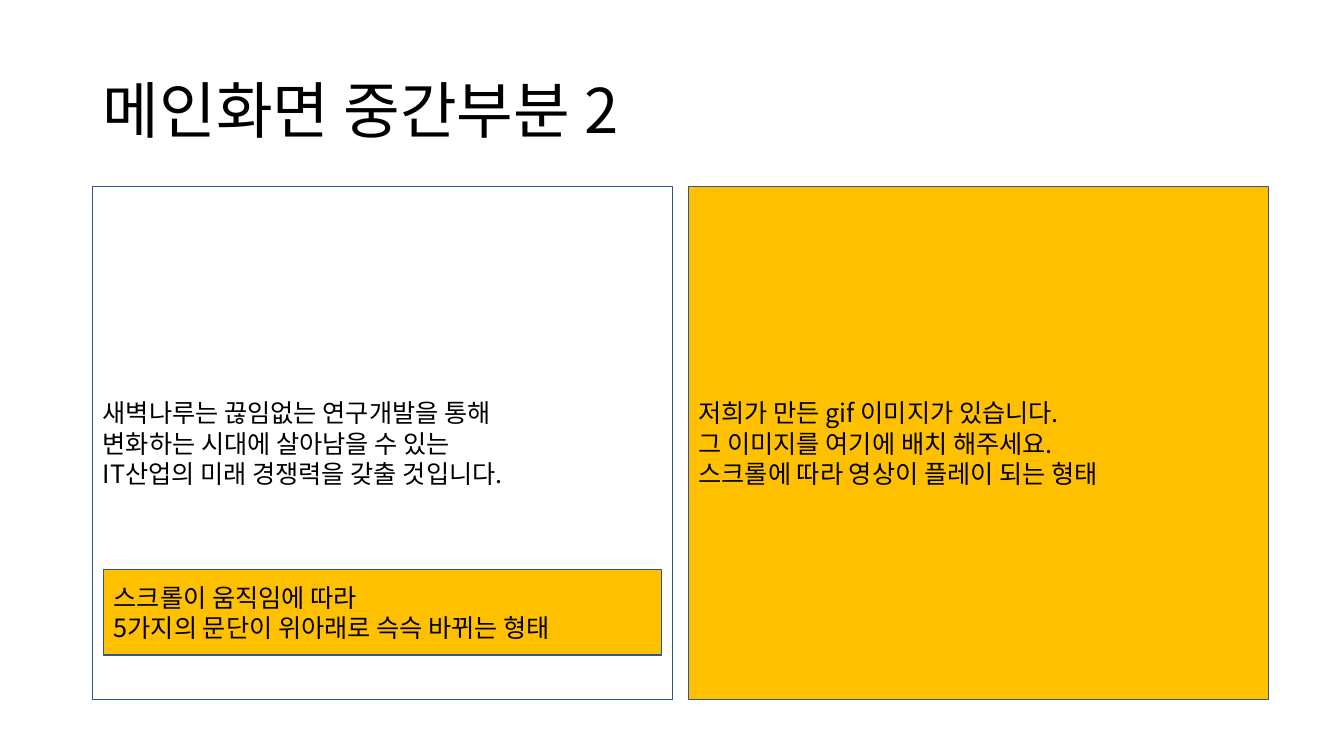
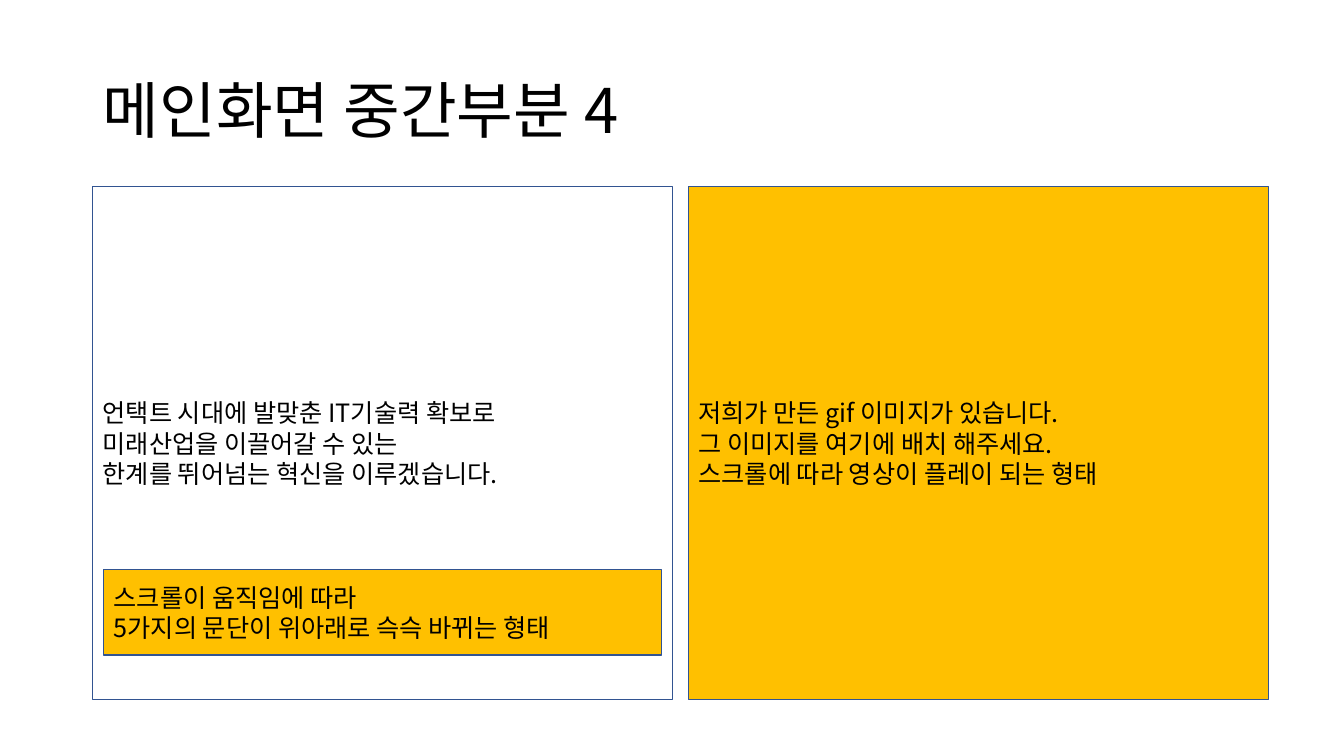
from dataclasses import dataclass

from lxml.etree import SubElement
from pptx import Presentation
from pptx.dml.color import RGBColor
from pptx.enum.shapes import MSO_SHAPE
from pptx.enum.text import MSO_ANCHOR, MSO_AUTO_SIZE, PP_ALIGN
from pptx.oxml.ns import qn
from pptx.util import Inches, Pt

SLIDES = [
    ("메인화면 중간부분 2", [
        "새벽나루는 끊임없는 연구개발을 통해",
        "변화하는 시대에 살아남을 수 있는",
        "IT산업의 미래 경쟁력을 갖출 것입니다.",
    ]),
    ("메인화면 중간부분 4", [
        "언택트 시대에 발맞춘 IT기술력 확보로",
        "미래산업을 이끌어갈 수 있는",
        "한계를 뛰어넘는 혁신을 이루겠습니다.",
    ]),
]
MEDIA = [
    "저희가 만든 gif 이미지가 있습니다.",
    "그 이미지를 여기에 배치 해주세요.",
    "스크롤에 따라 영상이 플레이 되는 형태",
]
SCROLL = [
    "스크롤이 움직임에 따라",
    "5가지의 문단이 위아래로 슥슥 바뀌는 형태",
]


@dataclass(frozen=True)
class Theme:
    font: str = "Noto Sans CJK KR"
    ink: str = "000000"
    edge: str = "325491"
    accent: str = "FFC000"
    title: int = 44
    body: int = 18


THEME = Theme()
WIDTH, HEIGHT = 13.33, 7.5
LEFT, TOP, GAP = 0.92, 1.85, 0.16
PANEL_W, PANEL_H = 5.75, 5.09
TITLE = (LEFT, 0.4, 11.5, 1.45)
COPY = (LEFT, TOP, PANEL_W, PANEL_H)
VIDEO = (LEFT + PANEL_W + GAP, TOP, PANEL_W, PANEL_H)
INSET = 0.11
NOTE = (LEFT + INSET, 5.65, PANEL_W - 2 * INSET, 0.85)


def write(frame, lines, size, space=1.0):
    frame.text = "\n".join(lines)
    frame.word_wrap = True
    frame.auto_size = MSO_AUTO_SIZE.NONE
    frame.vertical_anchor = MSO_ANCHOR.MIDDLE
    for para in frame.paragraphs:
        para.alignment = PP_ALIGN.LEFT
        para.line_spacing = space
        for run in para.runs:
            font = run.font
            font.size = Pt(size)
            font.color.rgb = RGBColor.from_string(THEME.ink)
            font.name = THEME.font
            # Hangul takes the East Asian typeface
            SubElement(run._r.get_or_add_rPr(), qn("a:ea"), typeface=THEME.font)


def add_panel(slide, box, lines, fill=None):
    panel = slide.shapes.add_shape(MSO_SHAPE.RECTANGLE, *map(Inches, box))
    panel.shadow.inherit = False
    if fill:
        panel.fill.solid()
        panel.fill.fore_color.rgb = RGBColor.from_string(fill)
    else:
        panel.fill.background()
    panel.line.color.rgb = RGBColor.from_string(THEME.edge)
    panel.line.width = Pt(1)
    write(panel.text_frame, lines, THEME.body)


def add_page(deck, name, lines):
    slide = deck.slides.add_slide(deck.slide_layouts[5])
    title = slide.shapes.title
    title.left, title.top, title.width, title.height = map(Inches, TITLE)
    write(title.text_frame, [name], THEME.title, 0.9)
    add_panel(slide, COPY, lines)
    add_panel(slide, VIDEO, MEDIA, THEME.accent)
    add_panel(slide, NOTE, SCROLL, THEME.accent)


def main():
    deck = Presentation()
    deck.slide_width, deck.slide_height = Inches(WIDTH), Inches(HEIGHT)
    for name, lines in SLIDES:
        add_page(deck, name, lines)
    deck.save("out.pptx")


if __name__ == "__main__":
    main()
